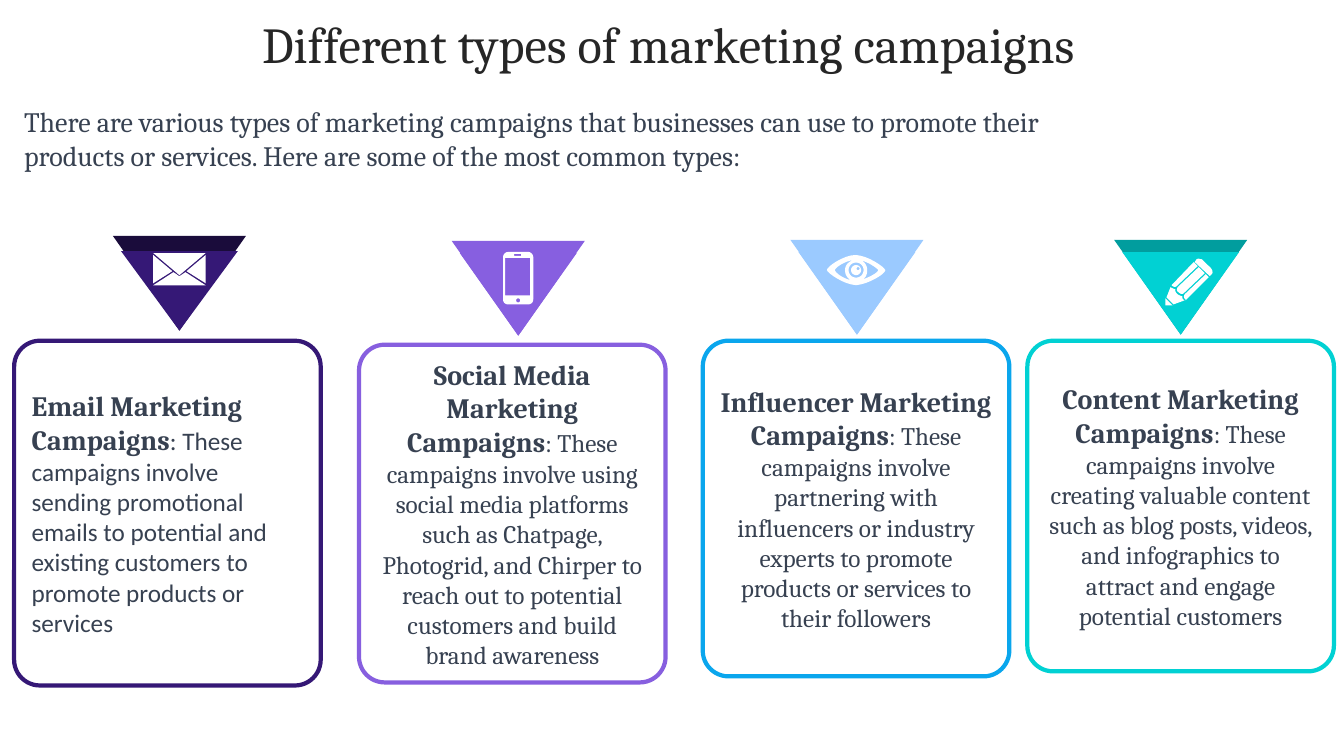
"""Build a slide on four types of marketing campaigns."""
from dataclasses import dataclass
from typing import NamedTuple

from pptx import Presentation
from pptx.dml.color import RGBColor
from pptx.enum.shapes import MSO_SHAPE
from pptx.enum.text import MSO_ANCHOR, PP_ALIGN
from pptx.util import Inches, Pt

WIDE, TALL = Inches(13.33), Inches(7.5)
SERIF, SANS = "Cambria", "Calibri"
WHITE, BLACK, SLATE = "FFFFFF", "262626", "374151"
STEPS = 8
FINE = 10
CARD_WIDE, CARD_ROUND = 22.81, 0.084
TIP_WIDE, TIP_TALL, TIP_EDGE = 9.9, 12.53, 0.6

Path = list[tuple[float, ...]]


class Area(NamedTuple):
    left: float
    top: float
    wide: float
    tall: float

    def frame(self) -> tuple[int, int, int, int]:
        return (int(WIDE * self.left / 100), int(TALL * self.top / 100),
                int(WIDE * self.wide / 100), int(TALL * self.tall / 100))


class Words(NamedTuple):
    text: str
    size: int
    font: str = SERIF
    color: str = SLATE
    bold: bool = False


class Icon(NamedTuple):
    left: float
    top: float
    paths: list[Path]


@dataclass
class Card:
    left: float
    top: float
    tall: float
    line: str
    head: str
    body: str
    tip_left: float
    tip_top: float
    back: str
    front: str
    icon: Icon
    depth: float = 10.93
    font: str = SERIF
    align: PP_ALIGN = PP_ALIGN.CENTER


def ring(x: float, y: float, r: float) -> Path:
    k = r * 0.55
    return [(x + r, y),
            (x + r, y + k, x + k, y + r, x, y + r),
            (x - k, y + r, x - r, y + k, x - r, y),
            (x - r, y - k, x - k, y - r, x, y - r),
            (x + k, y - r, x + r, y - k, x + r, y)]


MAIL = Icon(11.4, 33.47, [
    [(32, 19), (52, 32), (0, 32), (20, 19), (26, 23)],
    [(52, 2), (52, 30), (33, 18)],
    [(0, 2), (19, 18), (0, 30)],
    [(0, 0), (52, 0), (26, 22)]])
PHONE = Icon(37.43, 33.33, [
    [(5, 0), (25, 0), (28, 0, 30, 3, 30, 5), (30, 47), (30, 50, 28, 52, 25, 52),
     (5, 52), (2, 52, 0, 50, 0, 47), (0, 5), (0, 3, 2, 0, 5, 0)],
    [(2, 6), (2, 43), (27, 43), (27, 6)],
    [(11, 2), (11, 4), (18, 4), (18, 2)],
    ring(15, 48, 2)])
EYE = Icon(61.52, 33.73, [
    [(0, 15), (0, 12, 16, 0, 29, 0), (41, 1, 56, 11, 58, 15),
     (58, 19, 41, 29, 29, 30), (16, 29, 1, 18, 0, 15)],
    [(27, 5), (17, 6, 8, 13, 8, 15), (8, 17, 15, 23, 24, 25),
     (20, 23, 18, 19, 18, 15), (18, 10, 22, 6, 27, 5)],
    [(33, 5), (37, 6, 40, 10, 40, 15), (40, 19, 39, 22, 36, 24),
     (43, 22, 51, 17, 51, 15), (50, 13, 41, 7, 33, 5)],
    ring(29, 15, 7.5), ring(29, 15, 5), ring(31, 13.5, 1.5)])
PENCIL = Icon(86.72, 34.13, [
    [(0, 40), (7, 47), (0, 47)],
    [(5, 29), (7, 30, 9, 31, 10, 31), (9, 32, 10, 34, 12, 36),
     (14, 37, 16, 38, 17, 38), (16, 39, 17, 41, 19, 42), (8, 46), (1, 39)],
    [(40, 16), (43, 19), (20, 42), (20, 42, 20, 42, 20, 41), (18, 40, 18, 38, 19, 36)],
    [(33, 9), (39, 15), (18, 35), (17, 36, 15, 36, 13, 34), (11, 33, 11, 31, 12, 29)],
    [(28, 4), (32, 8), (11, 28), (10, 29, 8, 29, 6, 27)],
    [(34, 1), (35, 1, 36, 1, 37, 2), (45, 10), (47, 12, 47, 15, 46, 16),
     (45, 17, 44, 18, 44, 18), (29, 4), (31, 1), (32, 1, 33, 0, 34, 1)]])

CARDS = [
    Card(26.71, 45.6, 44.67, "875FDF", "Social Media Marketing Campaigns",
         ": These campaigns involve using social media platforms such as Chatpage, "
         "Photogrid, and Chirper to reach out to potential customers and build brand awareness",
         33.61, 31.87, "875FE0", "875FE0", PHONE),
    Card(1.05, 45.07, 45.6, "351876", "Email Marketing Campaigns",
         ": These campaigns involve sending promotional emails to potential and "
         "existing customers to promote products or services",
         8.4, 31.2, "1A0C3B", "351876", MAIL, 10.53, SANS, PP_ALIGN.LEFT),
    Card(52.29, 45.07, 44.4, "0AA6ED", "Influencer Marketing Campaigns",
         ": These campaigns involve partnering with influencers or industry experts "
         "to promote products or services to their followers",
         58.81, 31.73, "9BCAFF", "9BCAFF", EYE),
    Card(76.44, 45.07, 43.73, "01D1D3", "Content Marketing Campaigns",
         ": These campaigns involve creating valuable content such as blog posts, "
         "videos, and infographics to attract and engage potential customers",
         82.9, 31.73, "019D9E", "01D1D3", PENCIL),
]


def paint(target, color: str) -> None:
    target.solid()
    target.fore_color.rgb = RGBColor.from_string(color)


def write(shape, words: list[Words], align: PP_ALIGN, anchor: MSO_ANCHOR):
    frame = shape.text_frame
    frame.word_wrap = True
    frame.vertical_anchor = anchor
    para = frame.paragraphs[0]
    para.alignment = align
    for part in words:
        run = para.add_run()
        run.text = part.text
        run.font.size = Pt(part.size)
        run.font.name = part.font
        run.font.bold = part.bold
        paint(run.font.fill, part.color)
    return para


def finish(shape, fill: str, line: str = "") -> None:
    shape.shadow.inherit = False
    paint(shape.fill, fill)
    if line:
        paint(shape.line.fill, line)
        shape.line.width = Pt(3)
    else:
        shape.line.fill.background()


def trace(path: Path) -> list[tuple[float, float]]:
    points = [path[0]]
    for step in path[1:]:
        if len(step) == 2:
            points.append(step)
            continue
        knots = [points[-1], step[:2], step[2:4], step[4:]]
        for i in range(1, STEPS + 1):
            t = i / STEPS
            parts = ((1 - t) ** 3, 3 * t * (1 - t) ** 2, 3 * t * t * (1 - t), t ** 3)
            points.append(tuple(sum(p * k[axis] for p, k in zip(parts, knots))
                                for axis in (0, 1)))
    return [(x * FINE, y * FINE) for x, y in points]


def draw_icon(shapes, icon: Icon) -> None:
    first, *rest = [trace(path) for path in icon.paths]
    pen = shapes.build_freeform(*first[0], scale=Inches(0.01) / FINE)
    pen.add_line_segments(first[1:], close=True)
    for points in rest:
        pen.move_to(*points[0])
        pen.add_line_segments(points[1:], close=True)
    left, top, *_ = Area(icon.left, icon.top, 0, 0).frame()
    finish(pen.convert_to_shape(left, top), WHITE)


def draw_tip(shapes, area: Area, color: str) -> None:
    tip = shapes.add_shape(MSO_SHAPE.ISOSCELES_TRIANGLE, *area.frame())
    tip.rotation = 180
    finish(tip, color)


def draw_card(shapes, card: Card) -> None:
    area = Area(card.left, card.top, CARD_WIDE, card.tall)
    box = shapes.add_shape(MSO_SHAPE.ROUNDED_RECTANGLE, *area.frame())
    box.adjustments[0] = CARD_ROUND
    finish(box, WHITE, card.line)
    write(box, [Words(card.head, 20, bold=True), Words(card.body, 18, card.font)],
          card.align, MSO_ANCHOR.MIDDLE)
    draw_tip(shapes, Area(card.tip_left, card.tip_top, TIP_WIDE, TIP_TALL), card.back)
    draw_tip(shapes, Area(card.tip_left + TIP_EDGE, card.tip_top + TIP_TALL - card.depth,
                          TIP_WIDE - 2 * TIP_EDGE, card.depth), card.front)
    draw_icon(shapes, card.icon)


def main() -> None:
    deck = Presentation()
    deck.slide_width, deck.slide_height = WIDE, TALL
    shapes = deck.slides.add_slide(deck.slide_layouts[6]).shapes
    title = shapes.add_textbox(*Area(2.25, 0.93, 94.97, 10.53).frame())
    write(title, [Words("Different types of marketing campaigns", 36, color=BLACK)],
          PP_ALIGN.CENTER, MSO_ANCHOR.MIDDLE).line_spacing = 0.9
    for card in CARDS:
        draw_card(shapes, card)
    intro = shapes.add_textbox(*Area(1.05, 13.2, 84.1, 10.27).frame())
    write(intro, [Words("There are various types of marketing campaigns that businesses can "
                        "use to promote their products or services. Here are some of the "
                        "most common types:", 20)], PP_ALIGN.LEFT, MSO_ANCHOR.TOP)
    deck.save("out.pptx")


if __name__ == "__main__":
    main()
